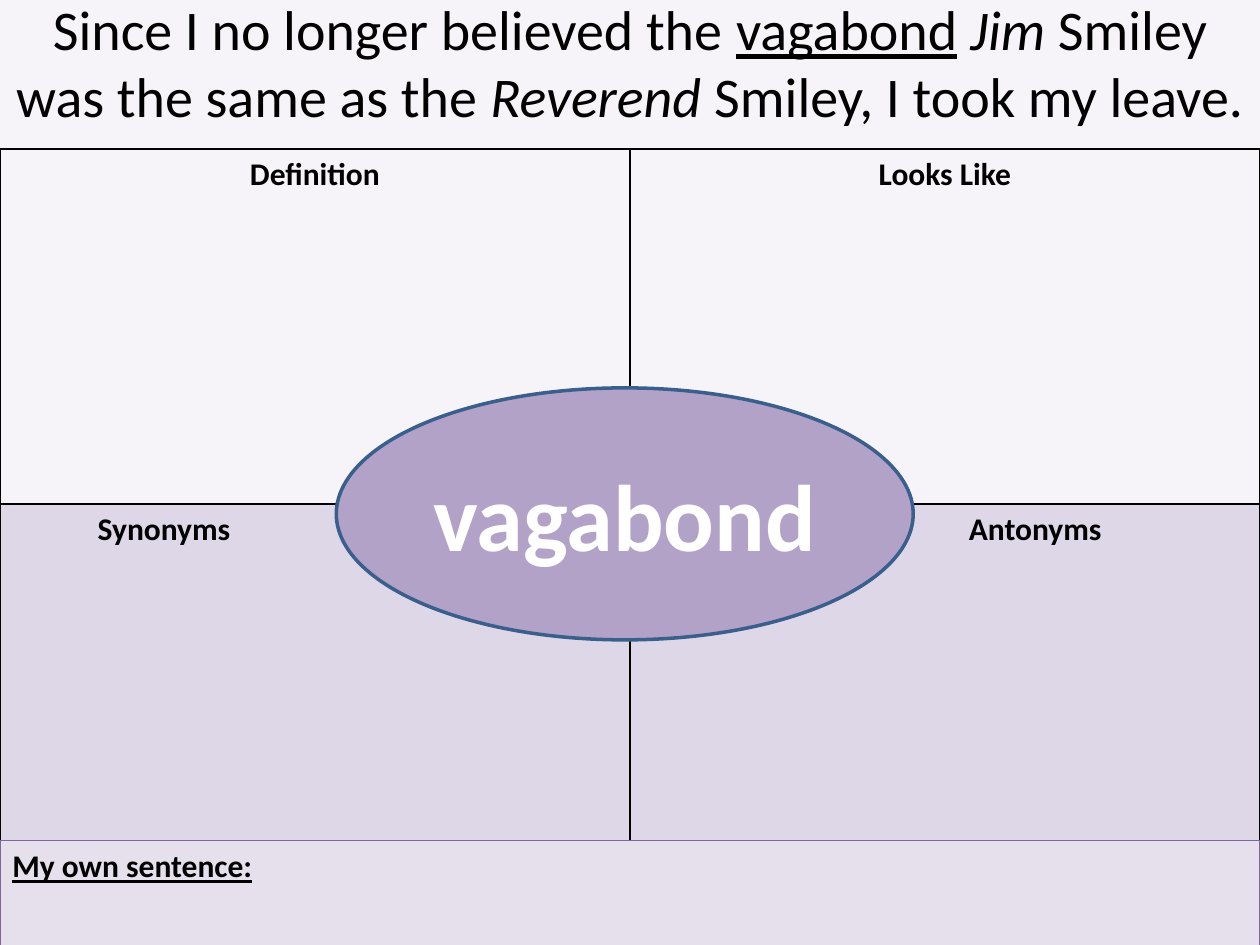
import pptx
import pptx.dml.color
import pptx.enum.shapes
import pptx.enum.text
import pptx.oxml
import pptx.oxml.ns
import pptx.util
from lxml import etree
from pptx.util import Cm

FONT = "Calibri"
BLACK = "000000"
CENTER = pptx.enum.text.PP_ALIGN.CENTER
LEFT = pptx.enum.text.PP_ALIGN.LEFT
SHAPES = pptx.enum.shapes.MSO_SHAPE
WIDTH, HEIGHT = Cm(25.4), Cm(19.05)


def color(value):
    return pptx.dml.color.RGBColor.from_string(value)


def fill_solid(fill, value):
    fill.solid()
    fill.fore_color.rgb = color(value)


def style_paragraph(paragraph, size, value=BLACK, bold=False, align=LEFT):
    paragraph.alignment = align
    font = paragraph.font
    font.name, font.size, font.bold = FONT, pptx.util.Pt(size), bold
    font.color.rgb = color(value)


def set_alpha(properties, percent):
    """Make the solid fill directly inside a cell's properties translucent."""
    fill_color = properties.find(pptx.oxml.ns.qn("a:solidFill"))[0]
    etree.SubElement(fill_color, pptx.oxml.ns.qn("a:alpha"), val=str(percent * 1000))


def add_borders(properties, value, points):
    """Border lines come before the fill in a cell's properties."""
    for index, side in enumerate(("lnL", "lnR", "lnT", "lnB")):
        line = pptx.oxml.parse_xml(
            f'<a:{side} {pptx.oxml.ns.nsdecls("a")} w="{pptx.util.Pt(points)}">'
            f'<a:solidFill><a:srgbClr val="{value}"/></a:solidFill></a:{side}>'
        )
        properties.insert(index, line)


def fill_cell(cell, label, align, indent, tint):
    cell.text = label
    style_paragraph(cell.text_frame.paragraphs[0], 18, bold=True, align=align)
    cell.margin_left = Cm(indent)
    properties = cell._tc.get_or_add_tcPr()
    if tint:
        fill_solid(cell.fill, tint)
        set_alpha(properties, 20)
    else:
        cell.fill.background()
    add_borders(properties, BLACK, 1)


def add_word_grid(slide):
    row_heights = (7.16, 7.92)
    table = slide.shapes.add_table(2, 2, 0, Cm(3), WIDTH, Cm(sum(row_heights))).table
    table.first_row = table.horz_banding = False
    for row, height in zip(table.rows, row_heights):
        row.height = Cm(height)
    # Label, alignment, left margin, tint
    cells = (
        ("Definition", CENTER, 0.25, None),
        ("Looks Like", CENTER, 0.25, None),
        ("Synonyms", LEFT, 1.97, "8064A2"),
        ("Antonyms", LEFT, 6.83, "8064A2"),
    )
    for cell, content in zip(table.iter_cells(), cells):
        fill_cell(cell, *content)


def add_example_sentence(slide):
    box = slide.shapes.add_textbox(0, Cm(-0.23), WIDTH, Cm(3))
    box.text_frame.word_wrap = True
    paragraph = box.text_frame.paragraphs[0]
    style_paragraph(paragraph, 32, align=CENTER)
    for text, emphasis in (
        ("Since I no longer believed the ", None),
        ("vagabond", "underline"),
        (" ", None),
        ("Jim ", "italic"),
        ("Smiley was the same as the ", None),
        ("Reverend ", "italic"),
        ("Smiley, I took my leave.", None),
    ):
        run = paragraph.add_run()
        run.text = text
        if emphasis:
            setattr(run.font, emphasis, True)


def add_label_shape(slide, kind, box, fill, line, line_width, text):
    shape = slide.shapes.add_shape(kind, *(Cm(length) for length in box))
    shape.shadow.inherit = False
    fill_solid(shape.fill, fill)
    shape.line.color.rgb = color(line)
    shape.line.width = pptx.util.Pt(line_width)
    shape.text_frame.text = text
    return shape.text_frame


def main():
    presentation = pptx.Presentation()
    presentation.slide_width, presentation.slide_height = WIDTH, HEIGHT
    slide = presentation.slides.add_slide(presentation.slide_layouts[6])
    fill_solid(slide.background.fill, "F6F4F9")

    add_word_grid(slide)
    add_example_sentence(slide)

    # Strip for the student's sentence
    frame = add_label_shape(slide, SHAPES.RECTANGLE, (0, 16.94, 25.4, 2.57),
                            "E6E0EC", "8064A2", 0.75, "My own sentence:")
    frame.vertical_anchor = pptx.enum.text.MSO_ANCHOR.TOP
    style_paragraph(frame.paragraphs[0], 18, bold=True)
    frame.paragraphs[0].font.underline = True

    # Word in the middle
    frame = add_label_shape(slide, SHAPES.OVAL, (6.78, 7.82, 11.63, 5.08),
                            "B3A2C7", "3A5F8C", 2, "vagabond")
    frame.vertical_anchor = pptx.enum.text.MSO_ANCHOR.MIDDLE
    style_paragraph(frame.paragraphs[0], 54, "FFFFFF", bold=True, align=CENTER)

    presentation.save("out.pptx")


if __name__ == "__main__":
    main()
